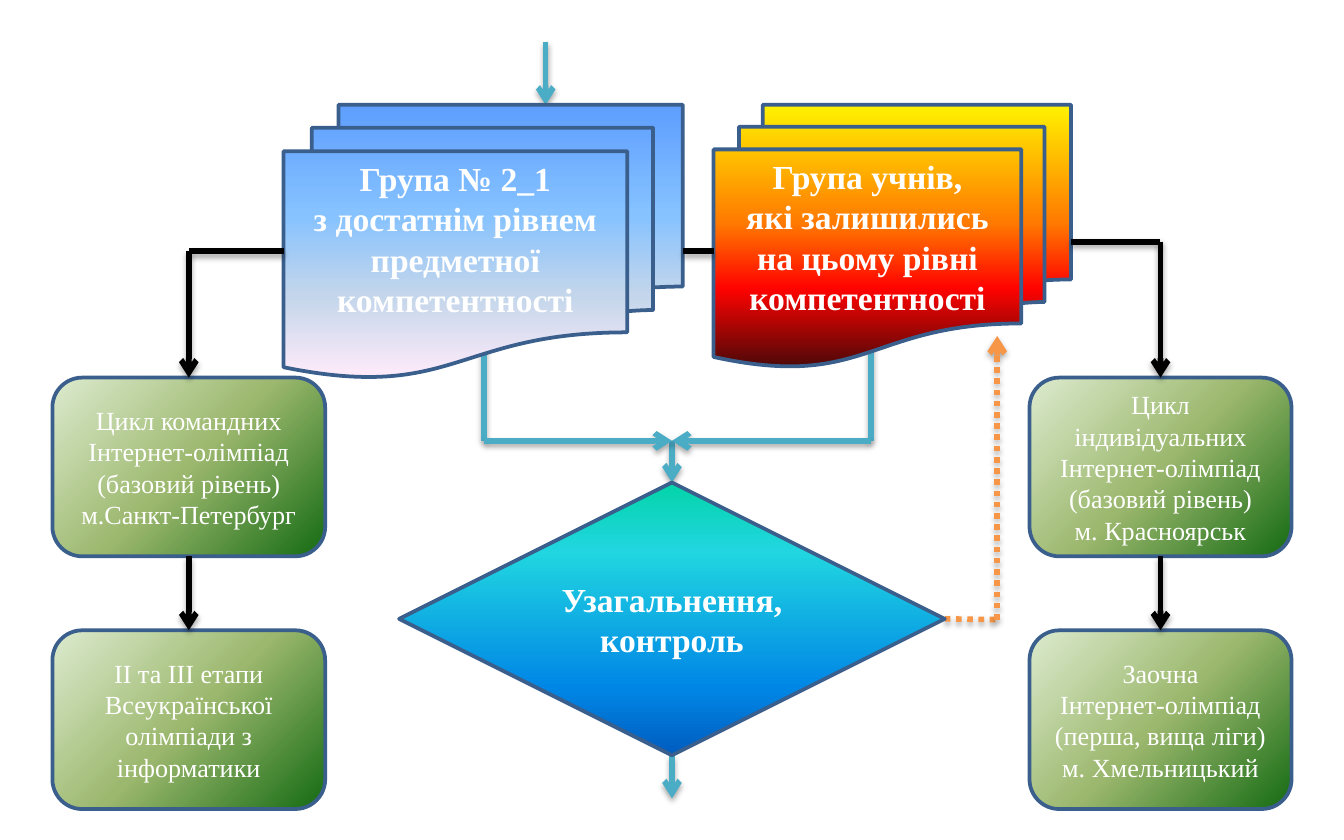
from itertools import pairwise
from lxml.etree import SubElement as Sub
from pptx import Presentation
from pptx.dml.color import RGBColor
from pptx.enum.dml import MSO_LINE as Dash
from pptx.enum.shapes import MSO_CONNECTOR as Conn, MSO_SHAPE as Kind
from pptx.enum.text import MSO_ANCHOR as Anchor, PP_ALIGN as Align
from pptx.oxml.ns import qn
from pptx.util import Inches, Pt

WHITE = RGBColor(0xFF, 0xFF, 0xFF)
BLACK = RGBColor(0, 0, 0)
EDGE = RGBColor(0x3A, 0x5F, 0x8C)
TEAL = RGBColor(0x4B, 0xAC, 0xC6)
ORANGE = RGBColor(0xF7, 0x96, 0x46)
FONT = "Times New Roman"
TOP, LEFT, BOTTOM, RIGHT = range(4)

# Gradients: angle, then stops of percent and colour
GREEN = 45, [(0, "DDEBCF"), (50, "9CB86E"), (100, "156B13")]
SKY = 90, [(0, "5E9EFF"), (40, "85C2FF"), (70, "C4D6EB"), (100, "FFEBFA")]
FIRE = 90, [(0, "FFF200"), (45, "FF7A00"), (70, "FF0300"), (100, "4D0808")]
OCEAN = 90, [(0, "03D4A8"), (25, "21D6E0"), (75, "0087E6"), (100, "005CBF")]

# Looks: shape, gradient, size, bold, anchor
CARD = Kind.ROUNDED_RECTANGLE, GREEN, 14, False, Anchor.MIDDLE
GROUP = Kind.FLOWCHART_MULTIDOCUMENT, SKY, 18, True, Anchor.TOP
REST = Kind.FLOWCHART_MULTIDOCUMENT, FIRE, 18, True, Anchor.TOP
CHECK = Kind.FLOWCHART_DECISION, OCEAN, 18, True, Anchor.MIDDLE

# Card grid
X1, W1, X2, W2 = 0.39, 2.03, 7.66, 1.95
Y1, Y2, H = 2.81, 4.69, 1.33
MID1, MID2 = X1 + W1 / 2, X2 + W2 / 2

NODES = {
    "team": (CARD, (X1, Y1, W1, H), [
        "Цикл командних", "Інтернет-олімпіад",
        "(базовий рівень)", "м.Санкт-Петербург"]),
    "solo": (CARD, (X2, Y1, W2, H), [
        "Цикл індивідуальних", "Інтернет-олімпіад",
        "(базовий рівень)", "м. Красноярськ"]),
    "stages": (CARD, (X1, Y2, W1, H), [
        "ІІ та ІІІ етапи Всеукраїнської олімпіади з інформатики"]),
    "remote": (CARD, (X2, Y2, W2, H), [
        "Заочна", "Інтернет-олімпіад",
        "(перша, вища ліги)", "м. Хмельницький"]),
    "group": (GROUP, (2.11, 0.78, 2.97, 2.03), [
        "Група № 2_1", "з достатнім рівнем", "предметної компетентності"]),
    "rest": (REST, (5.31, 0.78, 2.66, 1.95), [
        "Група учнів,", "які залишились на цьому рівні компетентності"]),
    "check": (CHECK, (2.97, 3.59, 4.06, 2.03), ["Узагальнення, контроль"]),
}

# Routes: points, colour, arrow at the end, joint at start, joint at end
BACK = [
    ([(7.03, 4.61), (7.42, 4.61), (7.42, 2.5)], ORANGE, True,
     ("check", RIGHT), None),
    ([(5, 3.28), (5, 3.59)], TEAL, True, None, ("check", TOP)),
    ([(6.48, 1.95), (6.48, 3.28), (5, 3.28)], TEAL, True, None, None),
    ([(3.6, 2.58), (3.6, 3.28), (5, 3.28)], TEAL, True, None, None),
    ([(4.06, 0.31), (4.06, 0.78)], TEAL, True, None, None),
    ([(5, 5.62), (5, 5.94)], TEAL, True, ("check", BOTTOM), None),
]
FRONT = [
    ([(5.08, 1.87), (5.31, 1.87)], BLACK, False, None, None),
    ([(7.97, 1.8), (MID2, 1.8), (MID2, Y1)], BLACK, True,
     None, ("solo", TOP)),
    ([(2.11, 1.87), (MID1, 1.87), (MID1, Y1)], BLACK, True,
     None, ("team", TOP)),
    ([(MID2, Y1 + H), (MID2, Y2)], BLACK, True,
     ("solo", BOTTOM), ("remote", TOP)),
    ([(MID1, Y1 + H), (MID1, Y2)], BLACK, True,
     ("team", BOTTOM), ("stages", TOP)),
]

deck = Presentation()
deck.slide_width, deck.slide_height = Inches(10), Inches(6.25)
shapes = deck.slides.add_slide(deck.slide_layouts[6]).shapes
nodes, joints = {}, []


def shade(shape, angle, stops):
    shape.fill.gradient()
    shape.fill.gradient_angle = 360 - angle
    items = shape.element.spPr.find(".//" + qn("a:gsLst"))
    for old in list(items):
        items.remove(old)
    for pos, tone in stops:
        stop = Sub(items, qn("a:gs"), pos=str(pos * 1000))
        Sub(stop, qn("a:srgbClr"), val=tone)


def add_node(look, box, lines):
    kind, tint, size, bold, anchor = look
    shape = shapes.add_shape(kind, *map(Inches, box))
    shape.shadow.inherit = False
    shade(shape, *tint)
    shape.line.color.rgb, shape.line.width = EDGE, Pt(2)
    frame = shape.text_frame
    frame.word_wrap, frame.vertical_anchor = True, anchor
    for i, line in enumerate(lines):
        para = frame.add_paragraph() if i else frame.paragraphs[0]
        para.alignment = Align.CENTER
        run = para.add_run()
        run.text = line
        font = run.font
        font.name, font.size, font.bold = FONT, Pt(size), bold
        font.color.rgb = WHITE
    return shape


def add_route(points, tone, arrow, start, end):
    legs = []
    for a, b in pairwise(points):
        leg = shapes.add_connector(Conn.STRAIGHT, *map(Inches, a + b))
        leg.line.color.rgb, leg.line.width = tone, Pt(3)
        if tone == ORANGE:
            leg.line.dash_style = Dash.ROUND_DOT
        legs.append(leg)
        # Soft shadow below the line
        glow = Sub(leg.element.spPr, qn("a:effectLst"))
        drop = Sub(glow, qn("a:outerShdw"), blurRad=str(Pt(3.1)),
                   dist=str(Pt(1.8)), dir="5400000", rotWithShape="0")
        dark = Sub(drop, qn("a:srgbClr"), val="000000")
        Sub(dark, qn("a:alpha"), val="35000")
    if arrow:
        Sub(legs[-1].element.spPr.find(qn("a:ln")), qn("a:tailEnd"),
            type="arrow")
    if start:
        joints.append((legs[0].begin_connect, start))
    if end:
        joints.append((legs[-1].end_connect, end))


# Lines behind the shapes, the shapes, then lines on top
for route in BACK:
    add_route(*route)
for name, node in NODES.items():
    nodes[name] = add_node(*node)
for route in FRONT:
    add_route(*route)

# Join the lines to the shapes
for join, (name, side) in joints:
    join(nodes[name], side)

deck.save("out.pptx")
